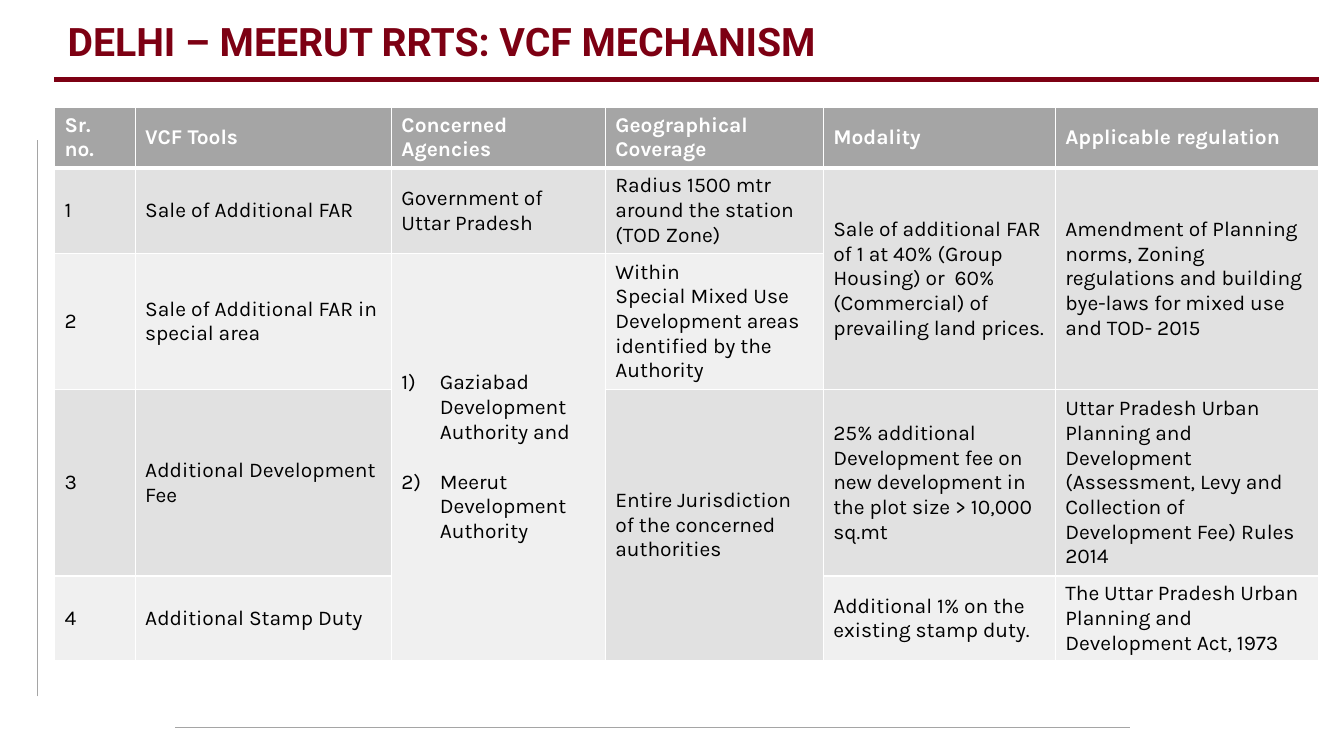
from lxml import etree
from pptx import Presentation
from pptx.dml.color import RGBColor
from pptx.enum.shapes import MSO_CONNECTOR
from pptx.enum.text import MSO_ANCHOR, PP_ALIGN
from pptx.oxml.ns import qn
from pptx.util import Inches, Pt

STRAIGHT = MSO_CONNECTOR.STRAIGHT
MIDDLE = MSO_ANCHOR.MIDDLE
LEFT = PP_ALIGN.LEFT
TITLE_ONLY = 5
WIDTH, HEIGHT = Inches(13.33), Inches(7.5)

MAROON, GREY, WHITE, BLACK = "7D0013", "A5A5A5", "FFFFFF", "000000"
BANDS = ["F0F0F0", "E1E1E1"]
TITLE_FONT = {"name": "Roboto", "size": Pt(28), "bold": True}
HEADER_FONT = {"name": "Karla", "size": Pt(15), "bold": True}
BODY_FONT = {"name": "Karla", "size": Pt(15), "bold": False}

COLUMN_WEIGHTS = [0.8, 2.54, 2.12, 2.16, 2.3, 2.61]
ROW_WEIGHTS = [0.6, 0.85, 1.35, 1.85, 0.84]
MERGES = [((1, 4), (2, 4)), ((1, 5), (2, 5)), ((2, 2), (4, 2)), ((3, 3), (4, 3))]
AGENCIES_CELL = (2, 2)
ROWS = [
    ["Sr. no.", "VCF Tools", "Concerned Agencies", "Geographical Coverage",
     "Modality", "Applicable regulation"],
    ["1", "Sale of Additional FAR", "Government of Uttar Pradesh",
     "Radius 1500 mtr around the station (TOD Zone)",
     "Sale of additional FAR of 1 at 40% (Group Housing) or  60% (Commercial) "
     "of prevailing land prices.",
     "Amendment of Planning norms, Zoning regulations and building bye-laws "
     "for mixed use and TOD- 2015"],
    ["2", "Sale of Additional FAR in special area",
     "Gaziabad Development Authority and\nMeerut Development Authority",
     "Within\nSpecial Mixed Use Development areas identified by the Authority",
     None, None],
    ["3", "Additional Development Fee", None,
     "Entire Jurisdiction of the concerned authorities",
     "25% additional Development fee on new development in the plot size > 10,000 sq.mt",
     "Uttar Pradesh Urban Planning and Development (Assessment, Levy and "
     "Collection of Development Fee) Rules 2014"],
    ["4", "Additional Stamp Duty", None, None,
     "Additional 1% on the existing stamp duty.",
     "The Uttar Pradesh Urban Planning and Development Act, 1973"],
]


def across(percent):
    """Return a percentage of the slide width."""
    return round(WIDTH * percent / 100)


def down(percent):
    """Return a percentage of the slide height."""
    return round(HEIGHT * percent / 100)


def paint(color_format, color):
    """Set a colour format from a hex string."""
    color_format.rgb = RGBColor.from_string(color)


def fill_solid(fill, color):
    """Fill with one colour."""
    fill.solid()
    paint(fill.fore_color, color)


def set_values(target, values):
    """Set attributes of an object from a dict."""
    for name, value in values.items():
        setattr(target, name, value)


def format_text(text_frame, font_values, color):
    """Apply one font and colour to every run."""
    for paragraph in text_frame.paragraphs:
        paragraph.alignment = LEFT
        for run in paragraph.runs:
            set_values(run.font, font_values)
            paint(run.font.color, color)


def add_title(slide, text):
    """Place and format the title placeholder."""
    title = slide.shapes.title
    set_values(title, {"left": across(4.28), "top": down(1.6),
                       "width": across(84.55), "height": down(7.6)})
    title.text_frame.text = text
    set_values(title.text_frame, {"word_wrap": True, "vertical_anchor": MIDDLE})
    format_text(title.text_frame, TITLE_FONT, MAROON)


def add_rule(slide, start, end, color, points):
    """Draw a straight line between two points given in percent."""
    rule = slide.shapes.add_connector(
        STRAIGHT, across(start[0]), down(start[1]), across(end[0]), down(end[1]))
    paint(rule.line.color, color)
    rule.line.width = Pt(points)
    etree.SubElement(rule._element.spPr, qn("a:effectLst"))


def add_borders(cell, row):
    """Draw white cell borders, thicker under the header."""
    properties = cell._tc.get_or_add_tcPr()
    thick_side = {0: "B", 1: "T"}.get(row)
    for side in "LRTB":
        points = 3 if side == thick_side else 1
        line = etree.SubElement(properties, qn(f"a:ln{side}"), w=str(Pt(points)))
        solid = etree.SubElement(line, qn("a:solidFill"))
        etree.SubElement(solid, qn("a:srgbClr"), val=WHITE)


def number_paragraphs(text_frame):
    """Number the paragraphs with a hanging indent and a gap between them."""
    indent = Inches(0.38)
    for index, paragraph in enumerate(text_frame.paragraphs):
        paragraph.space_before = Pt(18 if index else 0)
        properties = paragraph._p.get_or_add_pPr()
        properties.set("marL", str(indent))
        properties.set("indent", str(-indent))
        etree.SubElement(properties, qn("a:buFont"), typeface="+mj-lt")
        etree.SubElement(properties, qn("a:buAutoNum"), type="arabicParenR")


def format_cell(cell, row, text):
    """Write a cell with its borders, band colour and font."""
    header = row == 0
    add_borders(cell, row)
    fill_solid(cell.fill, GREY if header else BANDS[row % 2])
    cell.vertical_anchor = MIDDLE
    cell.text_frame.text = text
    format_text(cell.text_frame, HEADER_FONT if header else BODY_FONT,
                WHITE if header else BLACK)


def add_tools_table(slide):
    """Build the table of VCF tools."""
    width, height = across(94.07), down(73.2)
    table = slide.shapes.add_table(
        len(ROWS), len(COLUMN_WEIGHTS), across(4.05), down(14.2), width, height).table
    for column, weight in zip(table.columns, COLUMN_WEIGHTS):
        column.width = round(width * weight / sum(COLUMN_WEIGHTS))
    for table_row, weight in zip(table.rows, ROW_WEIGHTS):
        table_row.height = round(height * weight / sum(ROW_WEIGHTS))
    for first, last in MERGES:
        table.cell(*first).merge(table.cell(*last))
    for row, texts in enumerate(ROWS):
        for column, text in enumerate(texts):
            if text is not None:
                format_cell(table.cell(row, column), row, text)
    number_paragraphs(table.cell(*AGENCIES_CELL).text_frame)


def main():
    """Build and save the slide."""
    presentation = Presentation()
    set_values(presentation, {"slide_width": WIDTH, "slide_height": HEIGHT})
    slide = presentation.slides.add_slide(presentation.slide_layouts[TITLE_ONLY])
    fill_solid(slide.background.fill, WHITE)
    add_rule(slide, (2.78, 92.13), (2.78, 18.53), GREY, 0.5)
    add_rule(slide, (13.05, 96.27), (84.1, 96.27), GREY, 0.5)
    add_rule(slide, (4.05, 10.53), (98.12, 10.53), MAROON, 3)
    add_title(slide, "DELHI – MEERUT RRTS: VCF MECHANISM")
    add_tools_table(slide)
    presentation.save("out.pptx")


if __name__ == "__main__":
    main()
